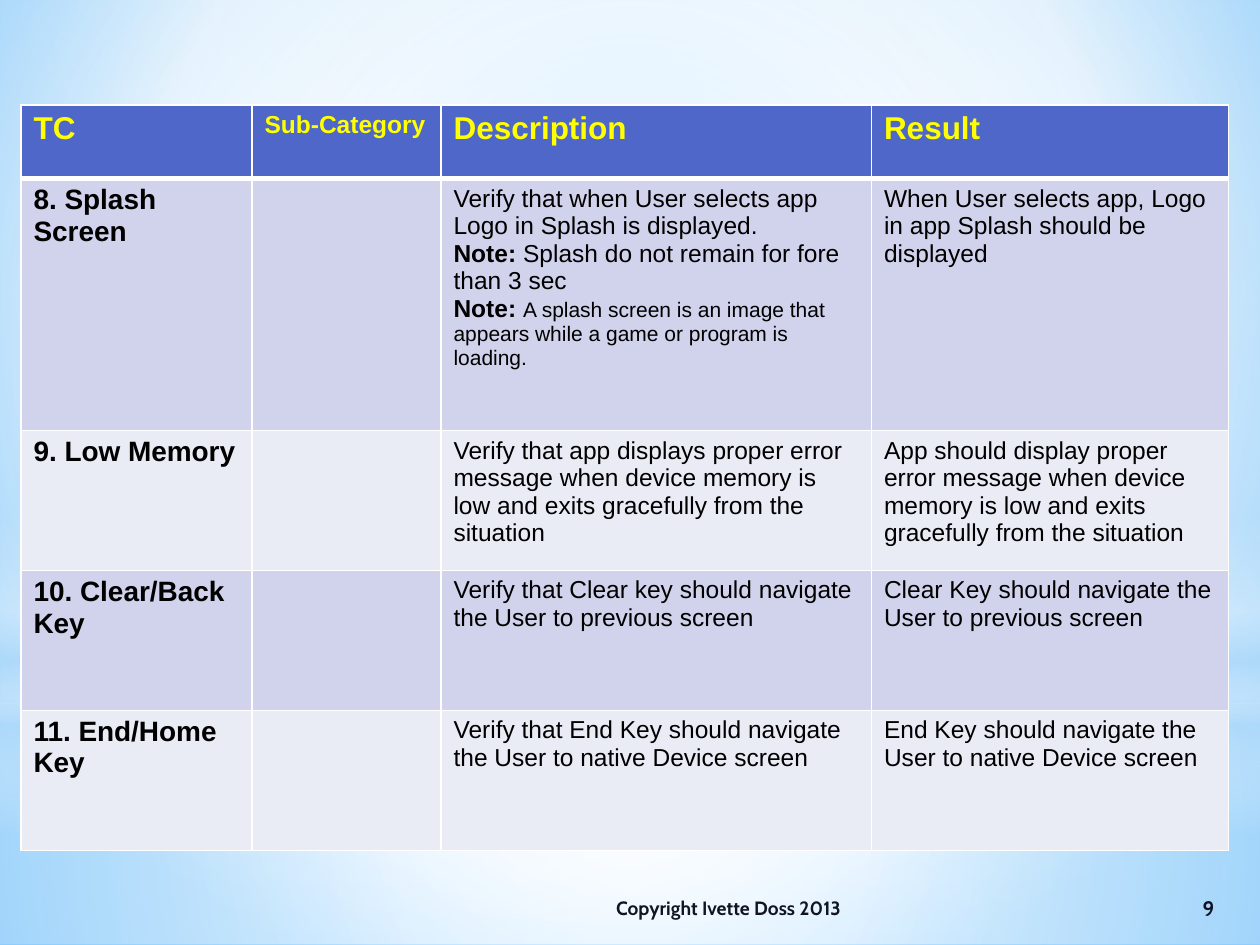
import pptx
import pptx.dml.color
import pptx.enum.shapes
import pptx.enum.text
import pptx.oxml
import pptx.oxml.ns
import pptx.util

RGB = pptx.dml.color.RGBColor
SHAPE = pptx.enum.shapes.MSO_SHAPE
ALIGN = pptx.enum.text.PP_ALIGN

WHITE = RGB(0xFF, 0xFF, 0xFF)
BLACK = RGB(0x00, 0x00, 0x00)
YELLOW = RGB(0xFF, 0xFF, 0x00)
HEADER = RGB(0x4E, 0x67, 0xC8)
BANDS = [RGB(0xD0, 0xD3, 0xEB), RGB(0xE9, 0xEB, 0xF5)]
INK = RGB(0x11, 0x14, 0x22)
PALE = RGB(0xB4, 0xDC, 0xFA)
SKY = RGB(0x9E, 0xD5, 0xFF)
AZURE = RGB(0x5B, 0xB9, 0xFF)

UNIT = pptx.util.Inches(1) // 12
CENTRE = (50, 50, 50, 50)
COLS = [22, 18, 41, 34]
ROWS = [7, 24, 13.33, 13.33, 13.33]
HEADINGS = [("TC", 18), ("Sub-Category", 14), ("Description", 18), ("Result", 18)]
CASES = [
    ("8. Splash Screen",
     [[("Verify that when User selects app Logo in Splash is displayed.", 14, False)],
      [("Note: ", 14, True), ("Splash do not remain for fore than 3 sec", 14, False)],
      [("Note: ", 14, True),
       ("A splash screen is an image that appears while a game or program is loading.",
        12, False)]],
     "When User selects app, Logo in app Splash should be displayed"),
    ("9. Low Memory",
     [[("Verify that app displays proper error message when device memory is low "
        "and exits gracefully from the situation", 14, False)]],
     "App should display proper error message when device memory is low "
     "and exits gracefully from the situation"),
    ("10. Clear/Back Key",
     [[("Verify that Clear key should navigate the User to previous screen", 14, False)]],
     "Clear Key should navigate the User to previous screen"),
    ("11. End/Home Key",
     [[("Verify that End Key should navigate the User to native Device screen", 14, False)]],
     "End Key should navigate the User to native Device screen"),
]


def grid(*units):
    return [round(u * UNIT) for u in units]


def set_gradient(parent, stops, focus=None):
    gs = "".join(
        f'<a:gs pos="{pos * 1000}"><a:srgbClr val="{color}">'
        f'<a:alpha val="{alpha * 1000}"/></a:srgbClr></a:gs>'
        for pos, color, alpha in stops)
    if focus:
        l, t, r, b = (v * 1000 for v in focus)
        shade = (f'<a:path path="circle"><a:fillToRect l="{l}" t="{t}" '
                 f'r="{r}" b="{b}"/></a:path>')
    else:
        shade = '<a:lin ang="5400000" scaled="0"/>'
    xml = (f'<a:gradFill {pptx.oxml.ns.nsdecls("a")} rotWithShape="1">'
           f'<a:gsLst>{gs}</a:gsLst>{shade}</a:gradFill>')
    solid = parent.find(pptx.oxml.ns.qn("a:solidFill"))
    parent.replace(solid, pptx.oxml.parse_xml(xml))


def add_glow(slide, kind, top, height, stops, focus=None):
    sp = slide.shapes.add_shape(kind, *grid(0, top, 120, height))
    sp.shadow.inherit = False
    sp.line.fill.background()
    sp.fill.solid()
    set_gradient(sp.element.spPr, stops, focus)


def add_backdrop(slide):
    slide.background.fill.solid()
    set_gradient(slide.element.xpath(".//p:bgPr")[0],
                 [(0, SKY, 100), (60, WHITE, 100), (100, AZURE, 100)], (20, 10, 20, 60))
    add_glow(slide, SHAPE.RECTANGLE, 67, 23,
             [(0, WHITE, 91), (37, WHITE, 76), (100, PALE, 79)], CENTRE)
    add_glow(slide, SHAPE.RECTANGLE, 0, 67,
             [(0, WHITE, 89), (48, WHITE, 62), (100, PALE, 79)], CENTRE)
    add_glow(slide, SHAPE.RECTANGLE, 49.5, 30,
             [(0, WHITE, 0), (29, WHITE, 30), (45, PALE, 40),
              (55, WHITE, 26), (65, PALE, 60), (100, WHITE, 0)])
    add_glow(slide, SHAPE.OVAL, 21, 67, [(0, WHITE, 100), (56, WHITE, 0)], CENTRE)


def style_run(r, size, color, bold, font="Arial"):
    r.font.name = font
    r.font.size = pptx.util.Pt(size)
    r.font.bold = bold
    r.font.color.rgb = color


def set_borders(cell, top, bottom):
    tc_pr = cell._tc.get_or_add_tcPr()
    for side, points in zip("LRTB", (1, 1, top, bottom)):
        tc_pr.append(pptx.oxml.parse_xml(
            f'<a:ln{side} {pptx.oxml.ns.nsdecls("a")} w="{pptx.util.Pt(points)}">'
            f'<a:solidFill><a:srgbClr val="{WHITE}"/></a:solidFill></a:ln{side}>'))


def fill_cell(cell, paragraphs, color, fill, top=1, bottom=1):
    set_borders(cell, top, bottom)
    cell.fill.solid()
    cell.fill.fore_color.rgb = fill
    tf = cell.text_frame
    for i, runs in enumerate(paragraphs):
        p = tf.add_paragraph() if i else tf.paragraphs[0]
        for text, size, bold in runs:
            r = p.add_run()
            r.text = text
            style_run(r, size, color, bold)


def add_case_table(slide):
    frame = slide.shapes.add_table(len(ROWS), len(COLS),
                                   *grid(2, 10, sum(COLS), sum(ROWS)))
    table = frame.table
    for col, width in zip(table.columns, grid(*COLS)):
        col.width = width
    for row, height in zip(table.rows, grid(*ROWS)):
        row.height = height
    for c, (text, size) in enumerate(HEADINGS):
        fill_cell(table.cell(0, c), [[(text, size, True)]], YELLOW, HEADER, bottom=3)
    for n, (title, description, result) in enumerate(CASES):
        contents = [[[(title, 16, True)]], [], description, [[(result, 14, False)]]]
        for c, paragraphs in enumerate(contents):
            fill_cell(table.cell(n + 1, c), paragraphs, BLACK, BANDS[n % 2],
                      top=1 if n else 3)


def add_footer(slide, left, width, text, size, align):
    sp = slide.shapes.add_textbox(*grid(left, 84.1, width, 4.8))
    tf = sp.text_frame
    tf.word_wrap = True
    tf.vertical_anchor = pptx.enum.text.MSO_ANCHOR.MIDDLE
    tf.text = text
    p = tf.paragraphs[0]
    p.alignment = align
    style_run(p.runs[0], size, INK, True, "Cabin")


def main():
    """Build the mobile test case slide."""
    prs = pptx.Presentation()
    prs.slide_width, prs.slide_height = grid(120, 90)
    slide = prs.slides.add_slide(prs.slide_layouts[6])
    add_backdrop(slide)
    add_case_table(slide)
    add_footer(slide, 57.5, 54.5, "Copyright Ivette Doss 2013", 11, ALIGN.LEFT)
    add_footer(slide, 112, 6.2, "9", 12, ALIGN.CENTER)
    prs.save("out.pptx")


if __name__ == "__main__":
    main()
